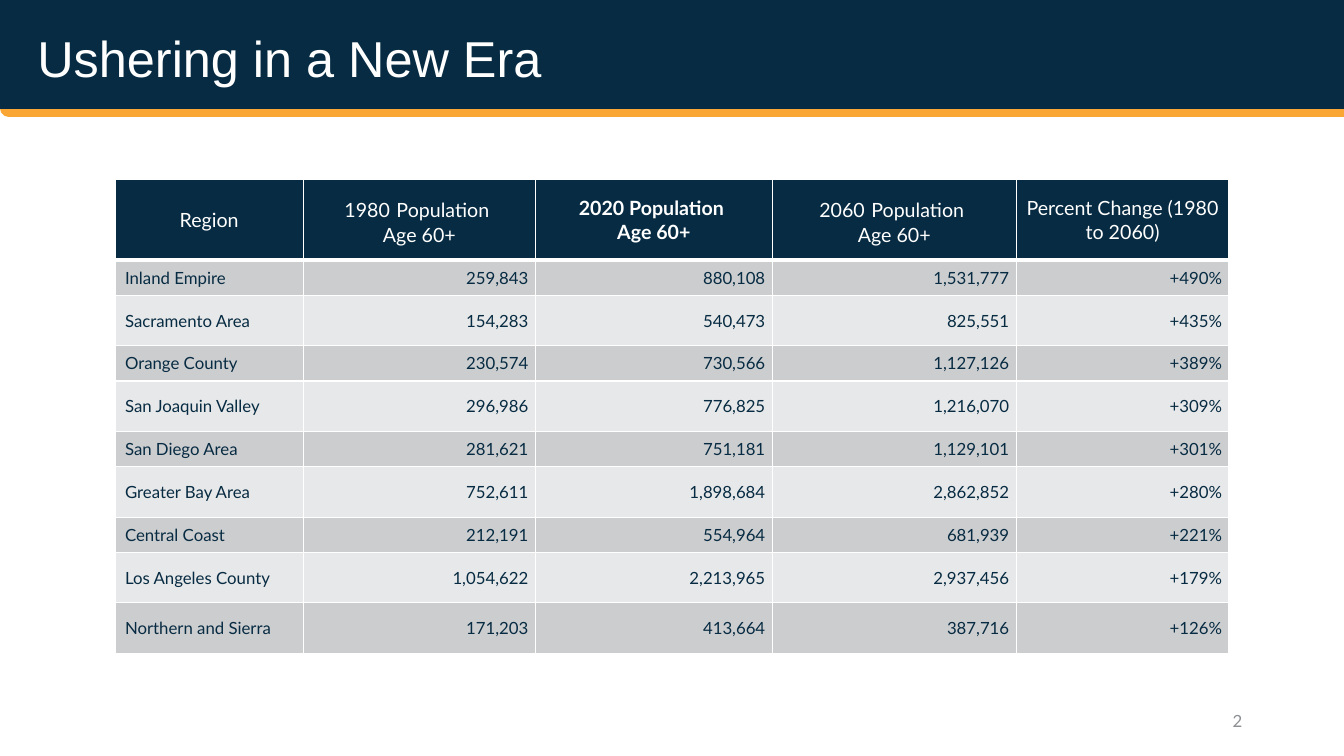
import pptx
import pptx.util
import pptx.dml.color
import pptx.enum.shapes
import pptx.enum.text
import pptx.oxml
import pptx.oxml.ns

Inches, Pt = pptx.util.Inches, pptx.util.Pt
SHAPE = pptx.enum.shapes.MSO_SHAPE
ALIGN = pptx.enum.text.PP_ALIGN
MIDDLE = pptx.enum.text.MSO_ANCHOR.MIDDLE
NAVY, GOLD, WHITE, GREY = "072B42", "FAA634", "FFFFFF", "8C8F93"
BANDS = ["CCCDCF", "E7E8E9"]
W, H = 13.33, 7.5


def rgb(value):
    return pptx.dml.color.RGBColor.from_string(value)


def style(p, size, color, align, font="Lato", bold=False):
    p.alignment = align
    p.font.name = font
    p.font.size = Pt(size)
    p.font.bold = bold
    p.font.color.rgb = rgb(color)


prs = pptx.Presentation()
prs.slide_width, prs.slide_height = Inches(W), Inches(H)
s = prs.slides.add_slide(prs.slide_layouts[5])

for kind, top, height, color in [
    (SHAPE.ROUNDED_RECTANGLE, 0.64, 0.52, GOLD),
    (SHAPE.RECTANGLE, -0.02, 1.1, NAVY),
]:
    sp = s.shapes.add_shape(kind, 0, Inches(top), Inches(W + 0.1), Inches(height))
    sp.shadow.inherit = False
    sp.fill.solid()
    sp.fill.fore_color.rgb = rgb(color)
    sp.line.fill.background()

number = s.shapes.add_textbox(Inches(9.42), Inches(6.95), Inches(3), Inches(0.4))
tf = number.text_frame
tf.word_wrap = True
tf.vertical_anchor = MIDDLE
tf.text = "2"
style(tf.paragraphs[0], 12, GREY, ALIGN.RIGHT)

headers = [
    ["Region"],
    ["1980 Population ", "Age 60+"],
    ["2020 Population ", "Age 60+"],
    ["2060 Population ", "Age 60+"],
    ["Percent Change (1980 to 2060)"],
]
regions = [
    ["Inland Empire", "259,843", "880,108", "1,531,777", "+490%"],
    ["Sacramento Area", "154,283", "540,473", "825,551", "+435%"],
    ["Orange County", "230,574", "730,566", "1,127,126", "+389%"],
    ["San Joaquin Valley", "296,986", "776,825", "1,216,070", "+309%"],
    ["San Diego Area", "281,621", "751,181", "1,129,101", "+301%"],
    ["Greater Bay Area", "752,611", "1,898,684", "2,862,852", "+280%"],
    ["Central Coast", "212,191", "554,964", "681,939", "+221%"],
    ["Los Angeles County", "1,054,622", "2,213,965", "2,937,456", "+179%"],
    ["Northern and Sierra", "171,203", "413,664", "387,716", "+126%"],
]
rows = [headers] + [[[text] for text in region] for region in regions]
widths = [1.87, 2.3, 2.35, 2.42, 2.11]
heights = [0.8] + [0.35, 0.5] * 4 + [0.5]

frame = s.shapes.add_table(len(rows), len(widths), Inches(1.14), Inches(1.78),
                           Inches(sum(widths)), Inches(sum(heights)))
table = frame.table
table.first_row = False
table.horz_banding = False
for column, width in zip(table.columns, widths):
    column.width = Inches(width)
for row, height in zip(table.rows, heights):
    row.height = Inches(height)

for i, row in enumerate(rows):
    for j, lines in enumerate(row):
        cell = table.cell(i, j)
        cell.vertical_anchor = MIDDLE
        tcPr = cell._tc.get_or_add_tcPr()
        for side in "LRTB":
            thick = (i, side) in [(0, "B"), (1, "T")]
            tcPr.append(pptx.oxml.parse_xml(
                f'<a:ln{side} {pptx.oxml.ns.nsdecls("a")} w="{Pt(3 if thick else 1)}">'
                f'<a:solidFill><a:srgbClr val="{WHITE}"/></a:solidFill></a:ln{side}>'))
        cell.fill.solid()
        cell.fill.fore_color.rgb = rgb(BANDS[(i - 1) % 2] if i else NAVY)
        if i and j:
            cell.margin_left = cell.margin_right = Inches(0.07)
            cell.margin_top = cell.margin_bottom = 0
        tf = cell.text_frame
        for k, line in enumerate(lines):
            p = tf.paragraphs[0] if k == 0 else tf.add_paragraph()
            if i == 0 and j in (1, 3) and k == 0:
                year, label = line.split(" ", 1)
                for text in (year, " ", label):
                    r = p.add_run()
                    r.text = text
                    if text == " ":
                        r.font.size = Pt(18)
            else:
                p.add_run().text = line
            if i == 0:
                style(p, 14, WHITE, ALIGN.CENTER, bold=j == 2)
            else:
                style(p, 12, NAVY, ALIGN.RIGHT if j else ALIGN.LEFT)

title = s.shapes.title
s.shapes._spTree.append(title._element)
title.left, title.top = Inches(0.27), Inches(0.23)
title.width, title.height = Inches(11.5), Inches(0.76)
tf = title.text_frame
tf.auto_size = pptx.enum.text.MSO_AUTO_SIZE.NONE
tf.vertical_anchor = MIDDLE
tf.text = "Ushering in a New Era"
style(tf.paragraphs[0], 36, WHITE, ALIGN.LEFT, font="Arial")
tf.paragraphs[0].line_spacing = 0.9

prs.save("out.pptx")
